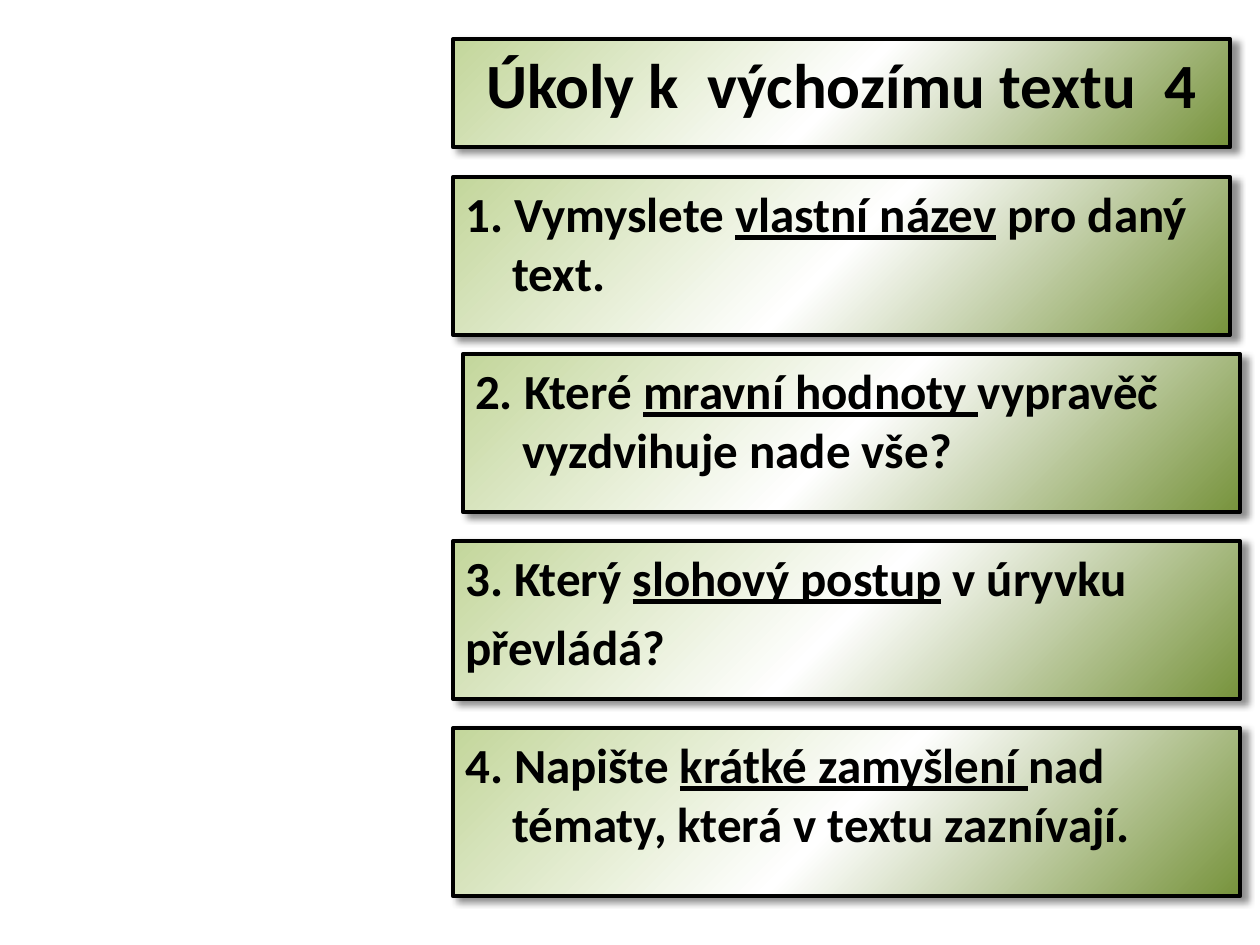
from copy import deepcopy

from lxml import etree
from pptx import Presentation
from pptx.dml.color import RGBColor
from pptx.enum.shapes import MSO_SHAPE as Shape
from pptx.enum.text import MSO_ANCHOR as Anchor, MSO_AUTO_SIZE as AutoSize, PP_ALIGN as Align
from pptx.oxml import parse_xml
from pptx.oxml.ns import qn
from pptx.util import Cm, Pt

BLACK = RGBColor(0x00, 0x00, 0x00)
LIGHT_GREEN = RGBColor(0xC3, 0xD6, 0x9B)
WHITE = RGBColor(0xFF, 0xFF, 0xFF)
DARK_GREEN = RGBColor(0x77, 0x93, 0x3C)
SHADOW = (
    '<a:outerShdw xmlns:a="http://schemas.openxmlformats.org/drawingml/2006/main" '
    'blurRad="50800" dist="50800" dir="1920000" algn="ctr" rotWithShape="0">'
    '<a:srgbClr val="000000"><a:alpha val="43000"/></a:srgbClr></a:outerShdw>'
)


def style_panel(box):
    """Give a box its diagonal gradient, black outline, shadow and text frame."""
    box.fill.gradient()
    box.fill.gradient_angle = 315
    stop_list = box.element.spPr.find(".//" + qn("a:gsLst"))
    stop_list.insert(1, deepcopy(stop_list[0]))
    colors = (LIGHT_GREEN, WHITE, DARK_GREEN)
    for number, (stop, color) in enumerate(zip(box.fill.gradient_stops, colors)):
        stop.position = number / 2
        stop.color.rgb = color
    box.line.color.rgb = BLACK
    box.line.width = Pt(2.25)
    box.shadow.inherit = False
    box.element.spPr.find(qn("a:effectLst")).append(parse_xml(SHADOW))
    frame = box.text_frame
    frame.word_wrap = True
    frame.auto_size = AutoSize.NONE
    frame.vertical_anchor = Anchor.TOP


def write(para, text, size=28, align=Align.LEFT, space_before=0):
    """Fill a hanging paragraph; parts between underscores are underlined."""
    para.alignment = align
    para.space_before = Pt(space_before)
    properties = para._p.get_or_add_pPr()
    properties.set("marL", str(Cm(0.95)))
    properties.set("indent", str(-Cm(0.95)))
    etree.SubElement(properties, qn("a:buNone"))
    for number, part in enumerate(text.split("_")):
        span = para.add_run()
        span.text = part
        span.font.name = "Calibri"
        span.font.size = Pt(size)
        span.font.bold = True
        span.font.underline = number % 2 == 1
        span.font.color.rgb = BLACK


deck = Presentation()
deck.slide_width, deck.slide_height = Cm(25.4), Cm(19.05)
page = deck.slides.add_slide(deck.slide_layouts[5])

# Title
title = page.shapes.title
title.left, title.top, title.width, title.height = Cm(9.13), Cm(0.79), Cm(15.67), Cm(2.18)
style_panel(title)
write(title.text_frame.paragraphs[0], "Úkoly k  výchozímu textu  4", size=36, align=Align.CENTER)

# Tasks: left, top, width, height in centimetres, then the paragraphs
tasks = [
    (9.13, 3.57, 15.67, 3.18, ["1. Vymyslete _vlastní název_ pro daný text."]),
    (9.33, 7.14, 15.67, 3.18, ["2. Které _mravní hodnoty _vypravěč vyzdvihuje nade vše?"]),
    (9.13, 10.91, 15.87, 3.18, ["3. Který _slohový postup_ v úryvku", "převládá?"]),
    (9.13, 14.68, 15.87, 3.39, ["4. Napište _krátké zamyšlení _nad tématy, která v textu zaznívají."]),
]
for left, top, width, height, lines in tasks:
    box = page.shapes.add_shape(Shape.RECTANGLE, Cm(left), Cm(top), Cm(width), Cm(height))
    style_panel(box)
    frame = box.text_frame
    for number, line in enumerate(lines):
        para = frame.add_paragraph() if number else frame.paragraphs[0]
        write(para, line, space_before=5.6 if number else 0)

deck.save("out.pptx")
